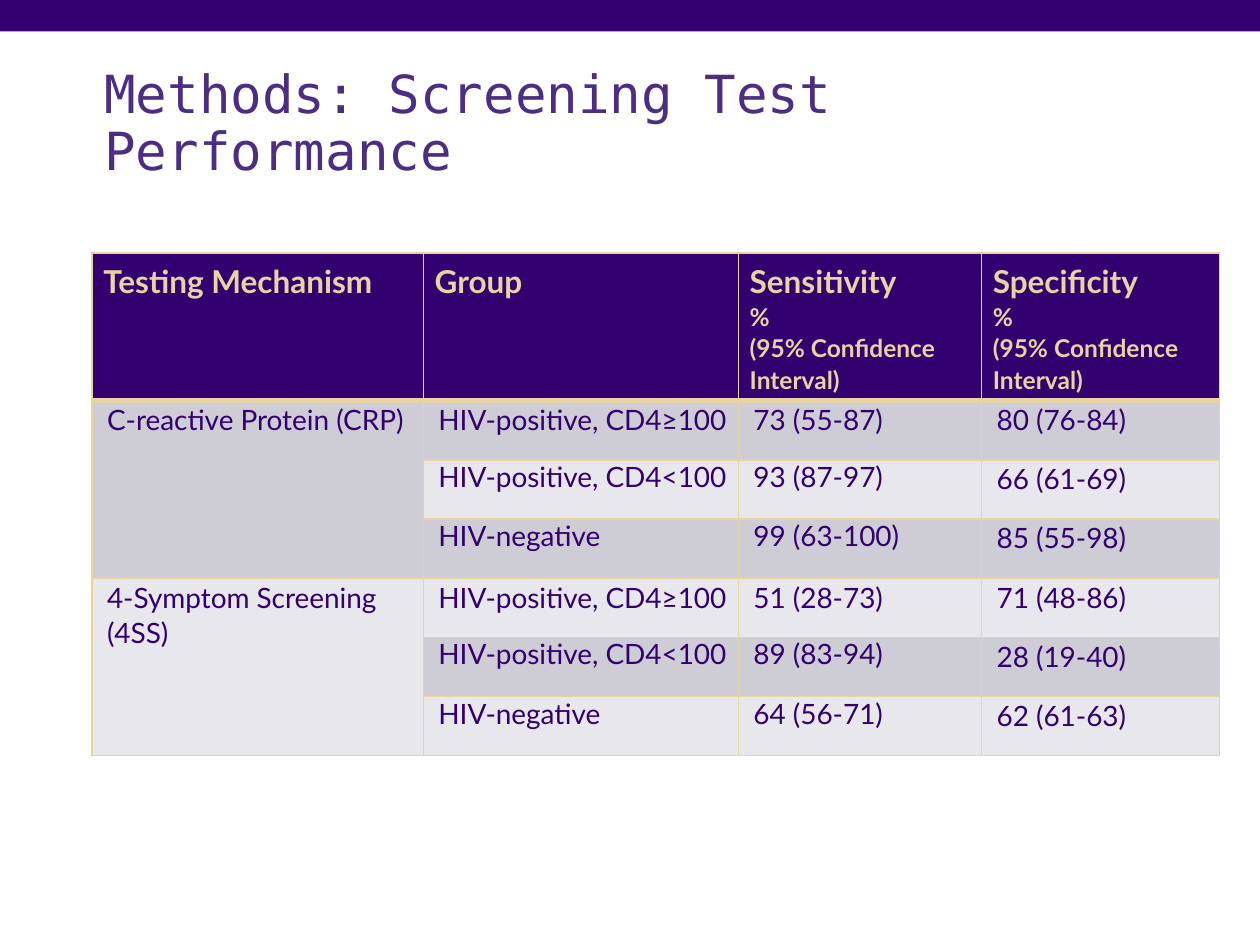
"""Build the slide on screening test performance."""
from lxml.etree import SubElement
from pptx import Presentation
from pptx.dml.color import RGBColor
from pptx.enum.shapes import MSO_SHAPE as Shape
from pptx.enum.text import MSO_ANCHOR as Anchor
from pptx.oxml.ns import qn
from pptx.util import Inches, Pt

PURPLE, GOLD = "33006F", "E8D3A2"
BANDS = ["CECCD5", "E8E7EB"]
HEADER = ["Testing Mechanism", "Group", "Sensitivity", "Specificity"]
UNITS = ["%", "(95% Confidence Interval)"]
GROUPS = ["HIV-positive, CD4≥100", "HIV-positive, CD4<100", "HIV-negative"]
TESTS = {
    "C-reactive Protein (CRP)": [
        ("73 (55-87)", "80 (76-84)"),
        ("93 (87-97)", "66 (61-69)"),
        ("99 (63-100)", "85 (55-98)"),
    ],
    "4-Symptom Screening (4SS)": [
        ("51 (28-73)", "71 (48-86)"),
        ("89 (83-94)", "28 (19-40)"),
        ("64 (56-71)", "62 (61-63)"),
    ],
}


def write(frame, text, size=16, color=PURPLE, font="Lato", bold=False, spacing=1.07, new=False):
    para = frame.add_paragraph() if new else frame.paragraphs[0]
    para.line_spacing = spacing
    span = para.add_run()
    span.text = text
    span.font.name, span.font.size, span.font.bold = font, Pt(size), bold
    span.font.color.rgb = RGBColor.from_string(color)


def style_cell(cell, fill, margins, top=1, bottom=1):
    cell.margin_left, cell.margin_top, cell.margin_right, cell.margin_bottom = map(Inches, margins)
    props = cell._tc.get_or_add_tcPr()
    for side, width in zip("LRTB", (1, 1, top, bottom)):
        line = SubElement(props, qn(f"a:ln{side}"), w=str(Pt(width)))
        SubElement(SubElement(line, qn("a:solidFill")), qn("a:srgbClr"), val=GOLD)
    cell.fill.solid()
    cell.fill.fore_color.rgb = RGBColor.from_string(fill)


deck = Presentation()
deck.slide_width, deck.slide_height = Inches(10), Inches(7.5)
page = deck.slides.add_slide(deck.slide_layouts[6])

band = page.shapes.add_shape(Shape.RECTANGLE, 0, 0, Inches(10), Inches(0.25))
band.shadow.inherit = False
band.fill.solid()
band.fill.fore_color.rgb = RGBColor.from_string(PURPLE)
band.line.fill.background()

title = page.shapes.add_textbox(Inches(0.73), Inches(0.41), Inches(8.95), Inches(1.08)).text_frame
title.word_wrap = True
title.vertical_anchor = Anchor.BOTTOM
write(title, "Methods: Screening Test Performance", size=30, color="4B2E83",
      font="DejaVu Sans Mono", spacing=0.9)

table = page.shapes.add_table(7, 4, Inches(0.73), Inches(2.01), Inches(8.95), Inches(3.97)).table
table.horz_banding = False
for column, width in zip(table.columns, (2.63, 2.5, 1.93, 1.89)):
    column.width = Inches(width)
for index, row in enumerate(table.rows):
    row.height = Inches(0.47 if index else 1.16)

for col, heading in enumerate(HEADER):
    cell = table.cell(0, col)
    style_cell(cell, PURPLE, (0.09, 0.05, 0.09, 0.05), bottom=3)
    write(cell.text_frame, heading, size=18, color=GOLD, bold=True)
    if col > 1:
        for unit in UNITS:
            write(cell.text_frame, unit, size=14, color=GOLD, bold=True, new=True)

for test, (name, results) in enumerate(TESTS.items()):
    first = 1 + test * len(GROUPS)
    for offset, (group, values) in enumerate(zip(GROUPS, results)):
        row = first + offset
        for col, text in enumerate((name, group, *values)):
            cell = table.cell(row, col)
            fill = BANDS[test if col == 0 else (row - 1) % 2]
            style_cell(cell, fill, (0.12, 0, 0, 0), top=3 if row == 1 else 1)
            if col or not offset:
                write(cell.text_frame, text, spacing=1.0 if offset and col in (1, 2) else 1.07)
    table.cell(first, 0).merge(table.cell(first + len(GROUPS) - 1, 0))

deck.save("out.pptx")
